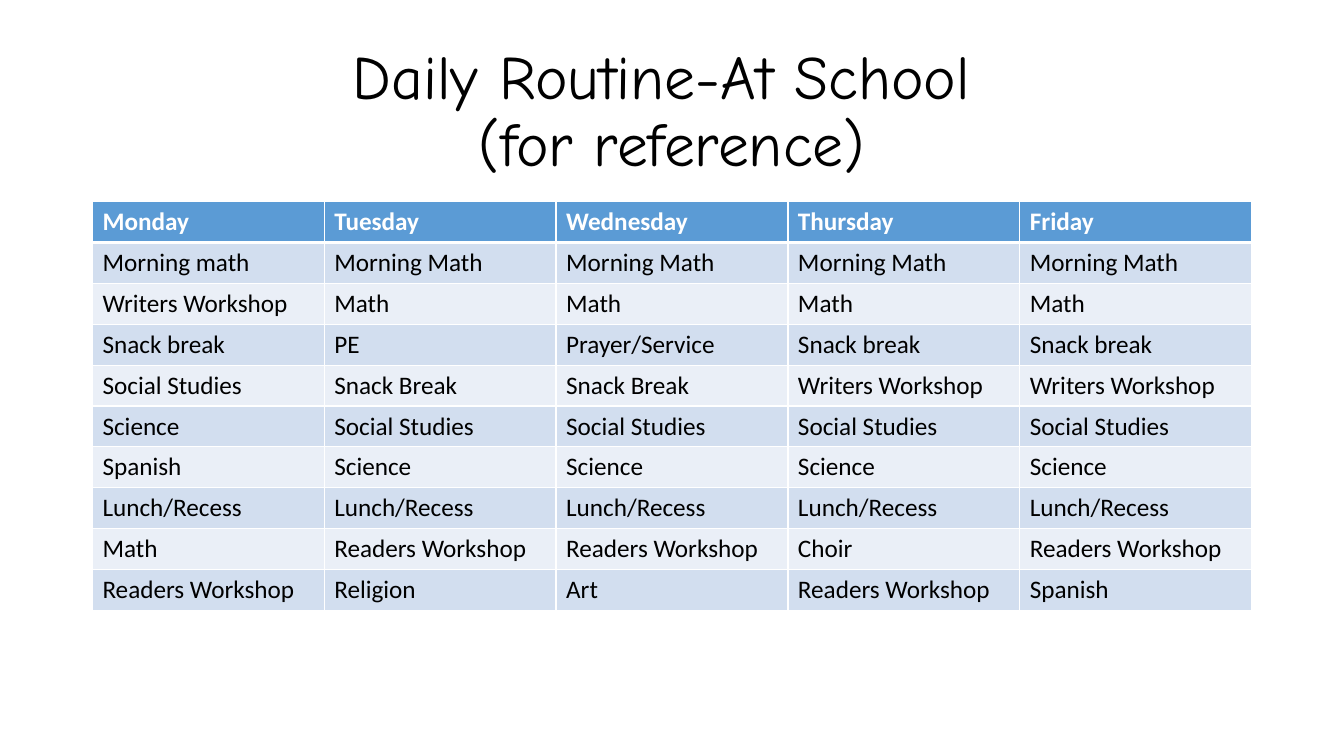
from lxml.etree import SubElement
from pptx import Presentation
from pptx.dml.color import RGBColor
from pptx.enum.text import MSO_ANCHOR, MSO_AUTO_SIZE, PP_ALIGN
from pptx.oxml.ns import qn
from pptx.util import Cm, Pt

BLACK = RGBColor(0x00, 0x00, 0x00)
WHITE = RGBColor(0xFF, 0xFF, 0xFF)
HEADER_BLUE = RGBColor(0x5B, 0x9B, 0xD5)
BAND_DARK = RGBColor(0xD2, 0xDE, 0xEF)
BAND_LIGHT = RGBColor(0xEA, 0xEF, 0xF7)

TITLE_LINES = ["Daily Routine-At School ", "(for reference)"]
DAYS = ["Monday", "Tuesday", "Wednesday", "Thursday", "Friday"]
LESSONS = [
    ["Morning math"] + ["Morning Math"] * 4,
    ["Writers Workshop"] + ["Math"] * 4,
    ["Snack break", "PE", "Prayer/Service", "Snack break", "Snack break"],
    ["Social Studies", "Snack Break", "Snack Break", "Writers Workshop", "Writers Workshop"],
    ["Science"] + ["Social Studies"] * 4,
    ["Spanish"] + ["Science"] * 4,
    ["Lunch/Recess"] * 5,
    ["Math", "Readers Workshop", "Readers Workshop", "Choir", "Readers Workshop"],
    ["Readers Workshop", "Religion", "Art", "Readers Workshop", "Spanish"],
]


class RoutineSlide:
    """Holds the slide and its text style."""

    title_font = "Comic Neue"
    table_font = "Calibri"

    def __init__(self, presentation):
        self.slide = presentation.slides.add_slide(presentation.slide_layouts[5])

    def add_run(self, paragraph, text, font, size, color, bold=False):
        run = paragraph.add_run()
        run.text = text
        run.font.name = font
        run.font.size = Pt(size)
        run.font.bold = bold
        run.font.color.rgb = color

    def title(self, lines, left, top, width, height):
        heading = self.slide.shapes.title
        heading.left, heading.top, heading.width, heading.height = left, top, width, height
        frame = heading.text_frame
        frame.word_wrap = True
        frame.auto_size = MSO_AUTO_SIZE.NONE
        frame.vertical_anchor = MSO_ANCHOR.MIDDLE
        paragraph = frame.paragraphs[0]
        paragraph.alignment = PP_ALIGN.CENTER
        paragraph.line_spacing = 0.9
        for number, line in enumerate(lines):
            if number:
                paragraph.add_line_break()
            self.add_run(paragraph, line, self.title_font, 44, BLACK)

    def borders(self, cell, top, bottom):
        properties = cell._tc.get_or_add_tcPr()
        for side, points in (("L", 1), ("R", 1), ("T", top), ("B", bottom)):
            line = SubElement(properties, qn(f"a:ln{side}"), w=str(Pt(points)))
            fill = SubElement(line, qn("a:solidFill"))
            SubElement(fill, qn("a:srgbClr"), val=str(WHITE))

    def timetable(self, days, lessons, left, top, width, height):
        rows = [days] + lessons
        table = self.slide.shapes.add_table(
            len(rows), len(days), left, top, width, height).table
        for row, entries in enumerate(rows):
            header = row == 0
            band = BAND_DARK if row % 2 else BAND_LIGHT
            for column, entry in enumerate(entries):
                cell = table.cell(row, column)
                # The header is set off by a thicker rule
                self.borders(cell, 3 if row == 1 else 1, 3 if header else 1)
                cell.fill.solid()
                cell.fill.fore_color.rgb = HEADER_BLUE if header else band
                self.add_run(cell.text_frame.paragraphs[0], entry, self.table_font,
                             18, WHITE if header else BLACK, header)


def main():
    presentation = Presentation()
    presentation.slide_width, presentation.slide_height = Cm(33.87), Cm(19.05)
    routine = RoutineSlide(presentation)

    # Heading
    routine.title(TITLE_LINES, Cm(2.33), Cm(1.01), Cm(29.21), Cm(3.68))

    # Weekly timetable
    routine.timetable(DAYS, LESSONS, Cm(2.33), Cm(5.08), Cm(29.21), Cm(10.3))

    presentation.save("out.pptx")


if __name__ == "__main__":
    main()
